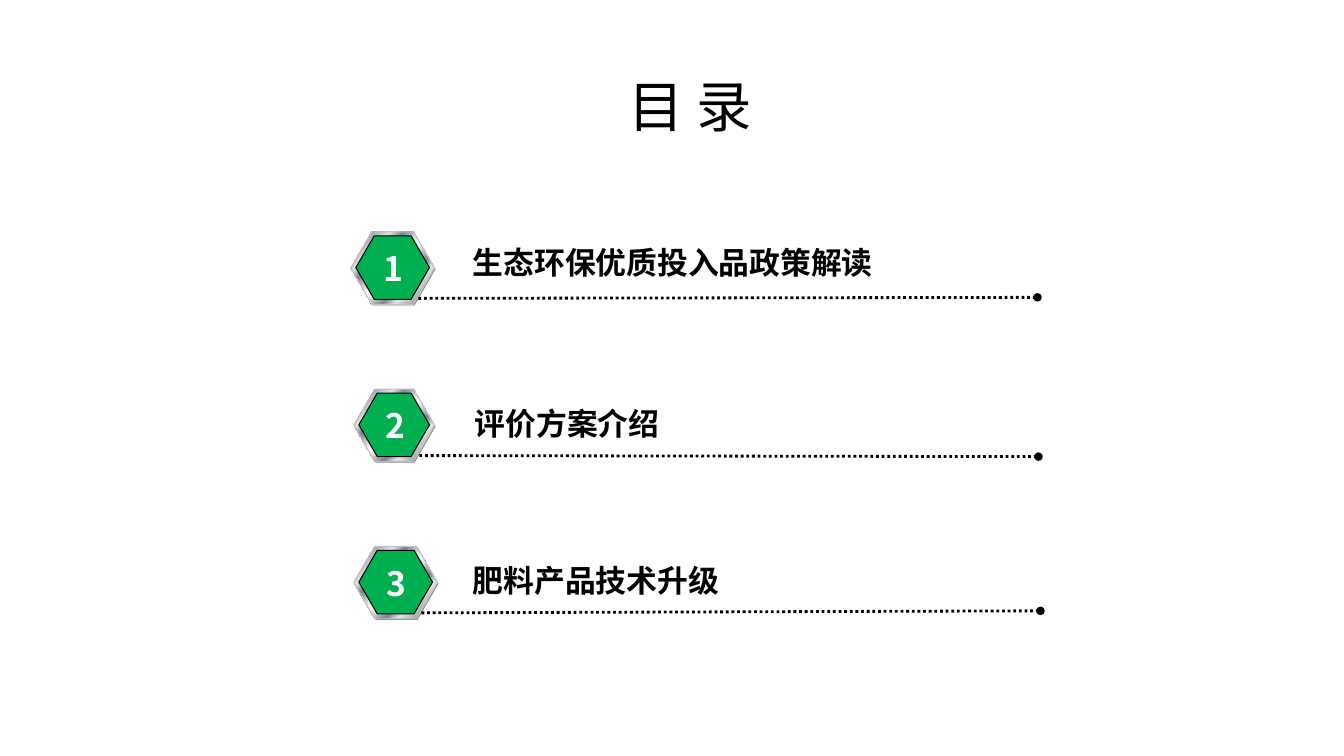
from dataclasses import dataclass

from lxml import etree
from pptx import Presentation
from pptx import util as u
from pptx.dml.color import RGBColor
from pptx.enum import dml, shapes, text
from pptx.oxml import ns


@dataclass(frozen=True)
class Theme:
    """Colours, font and type sizes of the slide."""
    font: str = "Noto Sans CJK SC"
    ink: str = "000000"
    white: str = "FFFFFF"
    green: str = "00B050"
    shade: str = "808080"
    rim: str = "C0C0C0"
    light: str = "E6E6E6"
    steel: str = "7D8496"
    title_size: float = 39.6
    entry_size: float = 22
    number_size: float = 24


@dataclass(frozen=True)
class Entry:
    """One contents line: wording, badge box, label offset and rule slope."""
    label: str
    left: float
    badge_width: float
    label_left: float
    label_middle: float
    rule_start: float
    rule_rise: float


THEME = Theme()
METAL = ((0, THEME.light), (8, THEME.steel), (26, THEME.light),
         (34, THEME.steel), (46, THEME.light), (50, THEME.white),
         (54, THEME.light), (66, THEME.steel), (74, THEME.light),
         (92, THEME.steel), (100, THEME.light))
ENTRIES = (
    Entry("生态环保优质投入品政策解读", 3.48, 0.83, 1.21, 0.3, 0.67, -0.01),
    Entry("评价方案介绍", 3.51, 0.8, 1.2, 0.34, 0.65, 0.01),
    Entry("肥料产品技术升级", 3.51, 0.83, 1.18, 0.34, 0.67, -0.02),
)
FIRST_TOP = 2.3
ROW_PITCH = 1.56
BADGE_HEIGHT = 0.72
RULE_LENGTH = 6.14


def add_text(slide, wording, left, top, width, height, *, size,
             color=THEME.ink, bold=False, align=text.PP_ALIGN.CENTER):
    """Add a vertically centred, margin-free text box."""
    box = slide.shapes.add_textbox(*map(u.Inches, (left, top, width, height)))
    frame = box.text_frame
    frame.word_wrap = True
    frame.vertical_anchor = text.MSO_ANCHOR.MIDDLE
    frame.margin_left = frame.margin_right = 0
    frame.margin_top = frame.margin_bottom = 0
    paragraph = frame.paragraphs[0]
    paragraph.alignment = align
    run = paragraph.add_run()
    run.text = wording
    run.font.size = u.Pt(size)
    run.font.bold = bold
    run.font.name = THEME.font
    run.font.color.rgb = RGBColor.from_string(color)
    properties = run.font._element
    east_asian = etree.SubElement(properties, ns.qn("a:ea"))
    east_asian.set("typeface", THEME.font)


def fill_metal(shape):
    """Fill a shape with the diagonal metallic gradient."""
    shape.fill.gradient()
    gradient = shape._element.spPr.find(ns.qn("a:gradFill"))
    stops = gradient.find(ns.qn("a:gsLst"))
    for stop in list(stops):
        stops.remove(stop)
    for percent, color in METAL:
        stop = etree.SubElement(stops, ns.qn("a:gs"), pos=str(percent * 1000))
        etree.SubElement(stop, ns.qn("a:srgbClr"), val=color)
    gradient.find(ns.qn("a:lin")).set("ang", str(45 * 60000))


def add_hexagon(slide, left, top, width, height, *, fill=None, line=None):
    """Add a hexagon, metallic unless a fill colour is given."""
    shape = slide.shapes.add_shape(
        shapes.MSO_SHAPE.HEXAGON,
        *map(u.Inches, (left, top, width, height)))
    shape.shadow.inherit = False
    shape.adjustments[0] = 0.289
    if fill:
        shape.fill.solid()
        shape.fill.fore_color.rgb = RGBColor.from_string(fill)
    else:
        fill_metal(shape)
    if line:
        shape.line.color.rgb = RGBColor.from_string(line)
        shape.line.width = u.Pt(0.75)
    else:
        shape.line.fill.background()


def add_badge(slide, number, left, top, width, height):
    """Draw the metal-rimmed hexagon with its number."""
    add_hexagon(slide, left + 0.01, top + 0.01, width, height, fill=THEME.shade)
    add_hexagon(slide, left, top, width, height, line=THEME.rim)
    add_hexagon(slide, left + 0.05, top + 0.04, width - 0.1, height - 0.09,
                fill=THEME.green, line=THEME.ink)
    add_text(slide, str(number), left + 0.01, top, width, height,
             size=THEME.number_size, color=THEME.white, bold=True)


def add_rule(slide, left, top, length, rise):
    """Draw a dotted rule that ends in a round dot."""
    rule = slide.shapes.add_connector(
        shapes.MSO_CONNECTOR.STRAIGHT,
        *map(u.Inches, (left, top, left + length, top + rise)))
    rule.line.color.rgb = RGBColor.from_string(THEME.ink)
    rule.line.width = u.Pt(2)
    rule.line.dash_style = dml.MSO_LINE.ROUND_DOT
    properties = rule._element.spPr
    etree.SubElement(properties.find(ns.qn("a:ln")), ns.qn("a:tailEnd"),
                     type="oval")
    etree.SubElement(properties, ns.qn("a:effectLst"))


def add_entry(slide, number, entry, top):
    """Place one contents line: badge, rule and label."""
    left = entry.left
    add_badge(slide, number, left, top, entry.badge_width, BADGE_HEIGHT)
    add_rule(slide, left + entry.rule_start, top + 0.66, RULE_LENGTH,
             entry.rule_rise)
    add_text(slide, entry.label, left + entry.label_left,
             top + entry.label_middle - 0.23, 5, 0.46,
             size=THEME.entry_size, bold=True, align=text.PP_ALIGN.LEFT)


def build_contents(slide):
    """Build the contents slide."""
    add_text(slide, "目 录", 6, 0.74, 1.69, 0.61, size=THEME.title_size)
    for index, entry in enumerate(ENTRIES):
        add_entry(slide, index + 1, entry, FIRST_TOP + index * ROW_PITCH)


def main():
    """Create and save the presentation."""
    presentation = Presentation()
    presentation.slide_width = u.Inches(13.33)
    presentation.slide_height = u.Inches(7.5)
    build_contents(presentation.slides.add_slide(presentation.slide_layouts[6]))
    presentation.save("out.pptx")


if __name__ == "__main__":
    main()
